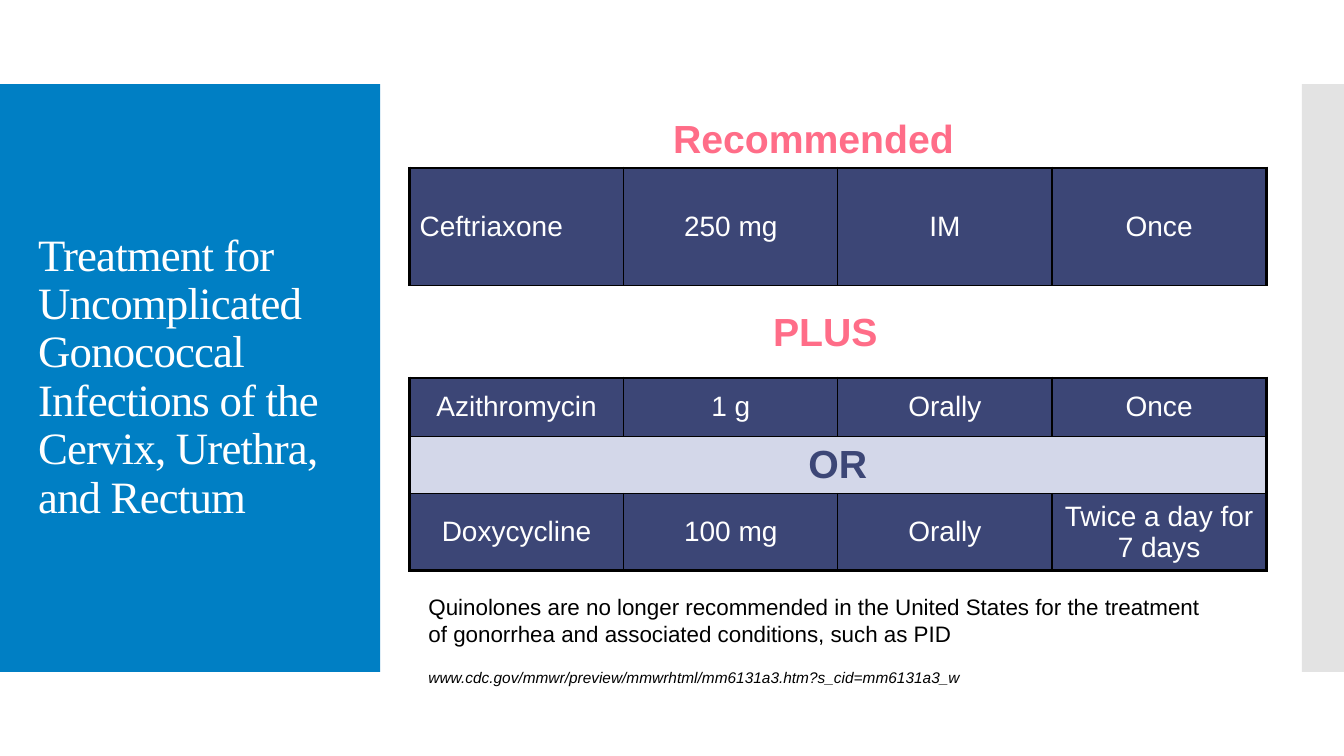
from lxml import etree
from pptx import Presentation
from pptx.dml import color
from pptx.enum import shapes, text
from pptx.oxml import ns
from pptx.util import Pt

NAVY, PALE, PINK, WHITE, BLACK = "3C4676", "D3D7E9", "FF6D88", "FFFFFF", "000000"
LEFT, MID = text.PP_ALIGN.LEFT, text.PP_ALIGN.CENTER


def rgb(code):
    """Turn a hex string into a colour."""
    return color.RGBColor.from_string(code)


def sub(node, tag, **attrs):
    """Add a drawing element below a node."""
    return etree.SubElement(node, ns.qn(tag), **attrs)


def style(par, size, ink, align=LEFT, face="Arial", bold=False, slant=False):
    """Set the font and alignment of a paragraph."""
    font = par.font
    font.size, font.name, font.bold, font.italic = Pt(size), face, bold, slant
    font.color.rgb = rgb(ink)
    par.alignment = align


def panel(slide, box, fill, alpha=100):
    """Draw a plain filled rectangle."""
    rect = slide.shapes.add_shape(shapes.MSO_SHAPE.RECTANGLE, *map(Pt, box))
    rect.shadow.inherit = False
    rect.line.fill.background()
    rect.fill.solid()
    rect.fill.fore_color.rgb = rgb(fill)
    if alpha < 100:
        tint = rect.element.spPr.find(".//" + ns.qn("a:srgbClr"))
        sub(tint, "a:alpha", val=str(alpha * 1000))


def heading(slide, box, words):
    """Place the title inside its blue panel."""
    left, top, width, height = box
    panel(slide, box, "007FC4")
    title = slide.shapes.title
    title.left, title.top = Pt(left + 20), Pt(top + 28.5)
    title.width, title.height = Pt(width - 39.5), Pt(height - 57.5)
    title.element.getparent().append(title.element)
    frame = title.text_frame
    frame.text = words
    frame.word_wrap = True
    frame.auto_size = text.MSO_AUTO_SIZE.NONE
    frame.vertical_anchor = text.MSO_ANCHOR.MIDDLE
    par = frame.paragraphs[0]
    par.line_spacing = 0.9
    style(par, 32, WHITE, face="Times New Roman")
    par.runs[0].font._element.set("spc", "-60")


def label(slide, box, words, *look, **more):
    """Place a line of text."""
    frame = slide.shapes.add_textbox(*map(Pt, box)).text_frame
    frame.word_wrap = True
    frame.text = words
    style(frame.paragraphs[0], *look, **more)


def edge(cell, **sides):
    """Draw the black borders of a cell, thick where a side is outer."""
    props = cell._tc.get_or_add_tcPr()
    for side, outer in sides.items():
        line = sub(props, "a:ln" + side, w=str(Pt(2.25 if outer else 1)))
        sub(sub(line, "a:solidFill"), "a:srgbClr", val=BLACK)


def doses(slide, box, rows, highs, first=MID, closed=True):
    """Draw a dose table, merging any row that has a single entry."""
    wide = max(map(len, rows))
    grid = slide.shapes.add_table(len(rows), wide, *map(Pt, box)).table
    grid.first_row = grid.horz_banding = False
    for col in grid.columns:
        col.width = Pt(box[2] / wide)
    for r, (row, high) in enumerate(zip(rows, highs)):
        grid.rows[r].height = Pt(high)
        joint = len(row) == 1
        if joint:
            grid.cell(r, 0).merge(grid.cell(r, wide - 1))
        for c, words in enumerate(row):
            cell = grid.cell(r, c)
            edge(cell, L=c == 0, R=c + 1 == len(row), T=r == 0,
                 B=closed and r + 1 == len(rows))
            cell.fill.solid()
            cell.fill.fore_color.rgb = rgb(PALE if joint else NAVY)
            cell.vertical_anchor = text.MSO_ANCHOR.MIDDLE
            cell.text = words
            style(cell.text_frame.paragraphs[0], 28 if joint else 20,
                  NAVY if joint else WHITE, MID if c else first, bold=joint)


def regimen(slide, box):
    """Lay out the two tables with their headings and notes."""
    left, top, width, _ = box
    label(slide, (left - 11.5, top, 600, 41), "Recommended", 28, PINK, MID, bold=True)
    doses(slide, (left, top + 42, width, 84), [["Ceftriaxone", "250 mg", "IM", "Once"]],
          [84], LEFT, closed=False)
    label(slide, (left + 138, top + 138, 318, 41), "PLUS", 28, PINK, MID, bold=True)
    doses(slide, (left, top + 192, width, 137.5),
          [["Azithromycin", "1 g", "Orally", "Once"], ["OR"],
           ["Doxycycline", "100 mg", "Orally", "Twice a day for 7 days"]],
          [41.5, 41, 55])
    label(slide, (left + 6.5, top + 342, 582, 46),
          "Quinolones are no longer recommended in the United States for the treatment "
          "of gonorrhea and associated conditions, such as PID", 16, BLACK)
    label(slide, (left + 6.5, top + 396, width, 21),
          "www.cdc.gov/mmwr/preview/mmwrhtml/mm6131a3.htm?s_cid=mm6131a3_w",
          11, BLACK, slant=True)


def main():
    """Build and save the slide."""
    deck = Presentation()
    deck.slide_width, deck.slide_height = Pt(960), Pt(540)
    slide = deck.slides.add_slide(deck.slide_layouts[5])
    heading(slide, (0, 60, 271.5, 420),
            "Treatment for Uncomplicated Gonococcal Infections of the Cervix, "
            "Urethra, and Rectum")
    panel(slide, (930, 60, 30, 420), "C8C8C8", 50)
    regimen(slide, (292.5, 78, 612, 417))
    deck.save("out.pptx")


if __name__ == "__main__":
    main()
